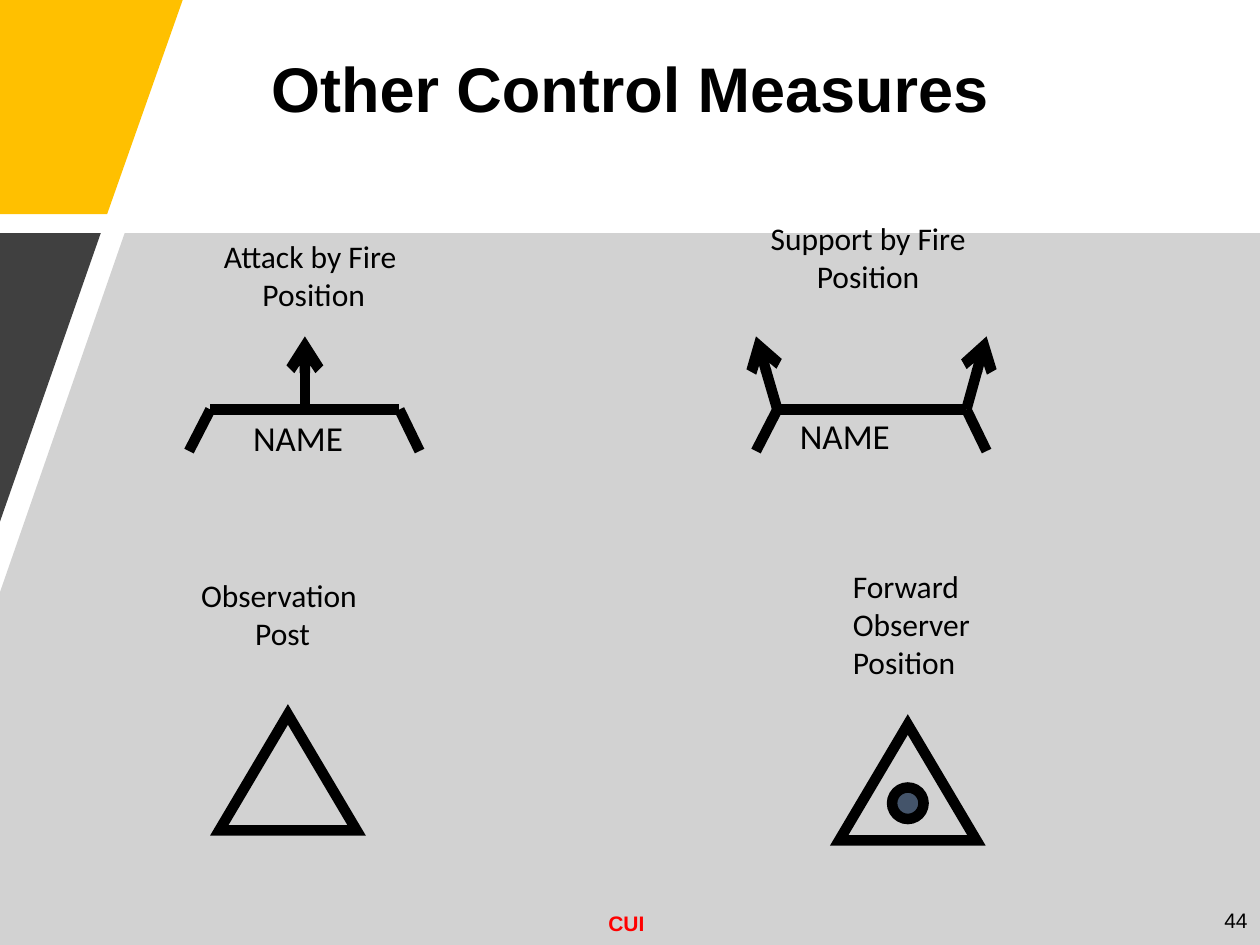
import pptx
import pptx.dml.color
import pptx.enum.shapes
import pptx.enum.text
import pptx.oxml.ns
import pptx.util
from lxml import etree

Inches = pptx.util.Inches
Align = pptx.enum.text.PP_ALIGN
Anchor = pptx.enum.text.MSO_ANCHOR
Shape = pptx.enum.shapes.MSO_SHAPE
qn = pptx.oxml.ns.qn


def color(value):
    return pptx.dml.color.RGBColor.from_string(value)


class SymbolSlide:
    """Holds the style and the slide, and draws each kind of element."""

    ink = "000000"
    stroke = 6
    heading_font = "Arial"
    label_font = "Calibri"

    def __init__(self, slide):
        self.slide = slide

    def format_text(self, frame, size, font, ink, bold, align):
        for paragraph in frame.paragraphs:
            paragraph.alignment = align
            for run in paragraph.runs:
                run.font.size = pptx.util.Pt(size)
                run.font.name = font
                run.font.bold = bold
                run.font.color.rgb = color(ink)

    def title(self, text, left, top, width, height):
        heading = self.slide.shapes.title
        heading.left, heading.top = Inches(left), Inches(top)
        heading.width, heading.height = Inches(width), Inches(height)
        frame = heading.text_frame
        frame.text = text
        frame.auto_size = pptx.enum.text.MSO_AUTO_SIZE.NONE
        frame.vertical_anchor = Anchor.TOP
        frame.paragraphs[0].line_spacing = 0.9
        self.format_text(frame, 36, self.heading_font, self.ink, True, Align.CENTER)

    def text(self, text, left, top, width, height, size=18, font=label_font,
             ink=ink, bold=False, align=Align.LEFT, anchor=Anchor.TOP, wrap=True):
        box = self.slide.shapes.add_textbox(
            Inches(left), Inches(top), Inches(width), Inches(height))
        frame = box.text_frame
        frame.text = text
        frame.word_wrap = wrap
        frame.vertical_anchor = anchor
        self.format_text(frame, size, font, ink, bold, align)

    def panel(self, points, fill):
        corners = [(Inches(x), Inches(y)) for x, y in points]
        builder = self.slide.shapes.build_freeform(*corners[0], scale=1.0)
        builder.add_line_segments(corners[1:], close=True)
        panel = builder.convert_to_shape()
        panel.shadow.inherit = False
        panel.fill.solid()
        panel.fill.fore_color.rgb = color(fill)
        panel.line.fill.background()

    def line(self, start, end, arrow=False):
        line = self.slide.shapes.add_connector(
            pptx.enum.shapes.MSO_CONNECTOR.STRAIGHT,
            *(Inches(value) for value in start + end))
        line.line.color.rgb = color(self.ink)
        line.line.width = pptx.util.Pt(self.stroke)
        if arrow:
            etree.SubElement(line.line._get_or_add_ln(), qn("a:tailEnd"), type="arrow")
        etree.SubElement(line._element.spPr, qn("a:effectLst"))

    def outline(self, kind, left, top, width, height, fill=None):
        figure = self.slide.shapes.add_shape(
            kind, Inches(left), Inches(top), Inches(width), Inches(height))
        figure.shadow.inherit = False
        if fill:
            figure.fill.solid()
            figure.fill.fore_color.rgb = color(fill)
        else:
            figure.fill.background()
        figure.line.color.rgb = color(self.ink)
        figure.line.width = pptx.util.Pt(self.stroke)
        etree.SubElement(figure.line._get_or_add_ln(), qn("a:miter"), lim="800000")

    def fire_position(self, left, arrows):
        base, foot, tip = 3.25, 3.58, 2.67
        start, end = left + 0.17, left + 1.67
        self.line((start, base), (end, base))
        self.line((left, foot), (start, base))
        self.line((left + 1.83, foot), (end, base))
        for tail, head in arrows:
            self.line((left + tail, base), (left + head, tip), arrow=True)

    def observation_triangle(self, left, top):
        self.outline(Shape.ISOSCELES_TRIANGLE, left, top, 1.09, 0.92)


def main():
    presentation = pptx.Presentation()
    presentation.slide_width = Inches(10)
    presentation.slide_height = Inches(7.5)
    page = SymbolSlide(presentation.slides.add_slide(presentation.slide_layouts[5]))

    page.panel([(0, 0), (1.45, 0), (0.85, 1.7), (0, 1.7)], "FFC000")
    page.panel([(0.99, 1.85), (10, 1.85), (10, 7.5), (0, 7.5), (0, 4.7)], "D2D2D2")
    page.panel([(0, 1.85), (0.8, 1.85), (0, 4.14)], "404040")
    page.text("CUI", 4.73, 7.18, 0.49, 0.3, size=12, font=page.heading_font,
              ink="FF0000", bold=True, wrap=False)
    page.text("44", 7.75, 7.1, 2.25, 0.4, size=12, font=page.heading_font,
              align=Align.RIGHT, anchor=Anchor.MIDDLE)
    page.title("Other Control Measures", 0, 0.41, 10, 0.66)

    page.fire_position(1.5, [(0.92, 0.92)])
    page.fire_position(6, [(0.17, 0), (1.67, 1.83)])
    for left, top in [(1.91, 3.26), (6.25, 3.24)]:
        page.text("NAME", left, top, 1.01, 0.43, size=20, wrap=False)

    page.observation_triangle(1.74, 5.67)
    page.observation_triangle(6.66, 5.75)
    page.outline(Shape.OVAL, 7.08, 6.25, 0.25, 0.25, fill="44546A")

    captions = [
        ("Attack by Fire \nPosition", 1.63, 1.83, 1.72, 0.71, Align.CENTER),
        ("Support by Fire \nPosition", 6, 1.69, 1.78, 0.71, Align.CENTER),
        ("Observation\n Post", 1.45, 4.52, 1.53, 0.71, Align.CENTER),
        ("Forward\nObserver\nPosition", 6.67, 4.45, 1.32, 1.01, Align.LEFT),
    ]
    for caption, left, top, width, height, align in captions:
        page.text(caption, left, top, width, height, align=align)

    presentation.save("out.pptx")


if __name__ == "__main__":
    main()
